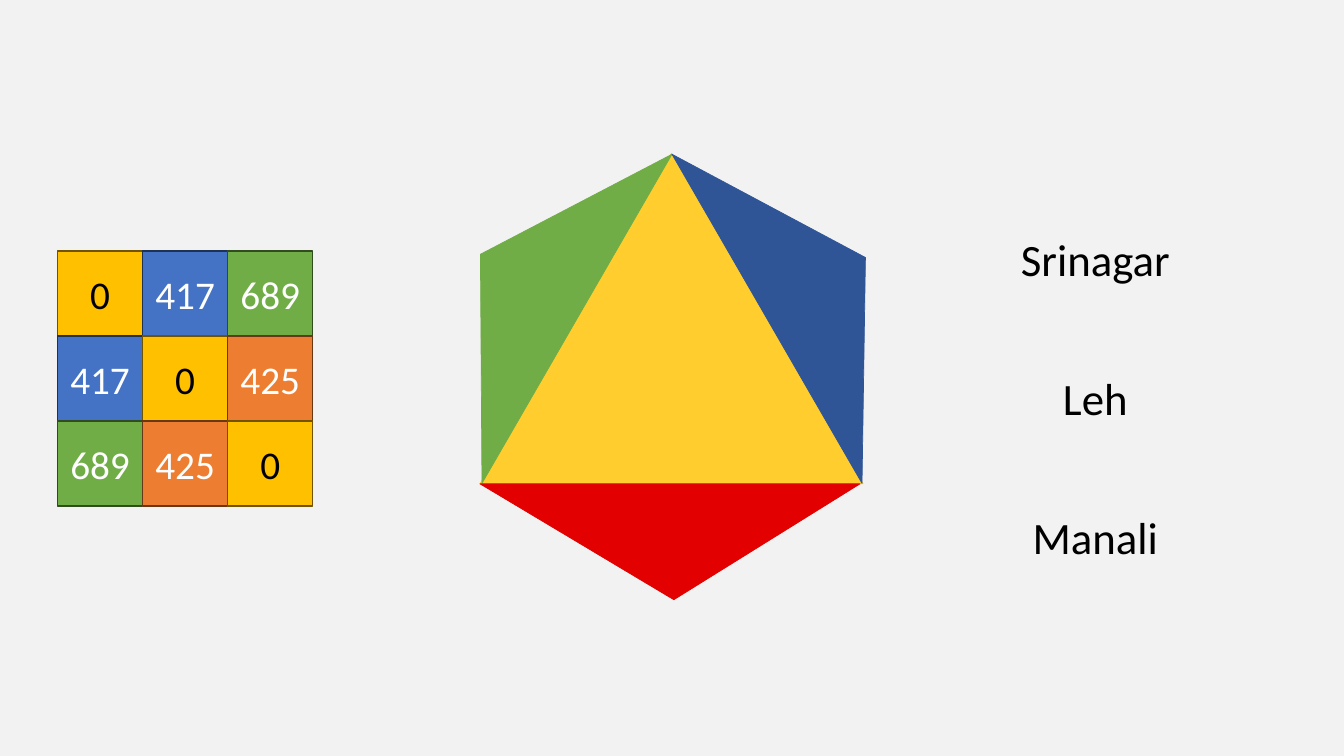
from dataclasses import dataclass

from pptx import Presentation
from pptx.dml.color import RGBColor
from pptx.enum.shapes import MSO_SHAPE
from pptx.enum.text import MSO_ANCHOR, MSO_AUTO_SIZE, PP_ALIGN
from pptx.shapes.autoshape import Shape
from pptx.shapes.shapetree import GroupShapes
from pptx.text.text import TextFrame
from pptx.util import Inches, Pt

TRI, RECT = MSO_SHAPE.ISOSCELES_TRIANGLE, MSO_SHAPE.RECTANGLE
MIDDLE, TOP = MSO_ANCHOR.MIDDLE, MSO_ANCHOR.TOP
CENTER, GROW = PP_ALIGN.CENTER, MSO_AUTO_SIZE.SHAPE_TO_FIT_TEXT
WIDE, HIGH = Inches(13.33), Inches(7.5)


@dataclass
class Face:
    """A triangle of the hexagon, placed in percent of the slide."""
    left: float
    top: float
    width: float
    height: float
    fill: str
    turn: float = 0
    peak: float = 0.5


@dataclass
class Tint:
    """The colours of one distance."""
    fill: str
    line: str
    text: str = "FFFFFF"


@dataclass
class City:
    """A city name and the width of its label in percent."""
    name: str
    width: float


FACES = [
    Face(35.71, 20.27, 28.51, 43.73, "FFCD2D"),
    Face(25.06, 30.67, 28.28, 15.33, "70AD47", 300, 0.52),
    Face(35.71, 64, 28.28, 15.33, "E20000", 180, 0.49),
    Face(46.66, 30.67, 28.28, 15.33, "2F5597", 60, 0.49),
]
ROADS = [[0, 417, 689], [417, 0, 425], [689, 425, 0]]
TINTS = {
    0: Tint("FFC000", "705400", "000000"),
    417: Tint("4472C4", "1E3256"),
    425: Tint("ED7D31", "683715"),
    689: Tint("70AD47", "314C1F"),
}
CITIES = [City("Srinagar", 12.75), City("Leh", 6.38), City("Manali", 10.95)]
GRID_X, GRID_Y, CELL_W, CELL_H = 4.28, 33.2, 6.33, 11.25
NAME_X, NAME_Y, NAME_H, STEP = 81.5, 30, 8.53, 18.4


def color(code: str) -> RGBColor:
    """Turn a hex string into a colour."""
    return RGBColor.from_string(code)


def place(left: float, top: float, width: float, height: float) -> tuple[int, ...]:
    """Turn percent of the slide into lengths."""
    return (int(WIDE * left / 100), int(HIGH * top / 100),
            int(WIDE * width / 100), int(HIGH * height / 100))


def write(frame: TextFrame, text: str, *, size: float, tone: str = "000000",
          anchor: MSO_ANCHOR = TOP, wrap: bool = True) -> None:
    """Write one centred line of text."""
    frame.word_wrap = wrap
    frame.vertical_anchor = anchor
    para = frame.paragraphs[0]
    para.alignment = CENTER
    run = para.add_run()
    run.text = text
    run.font.name = "Calibri"
    run.font.size = Pt(size)
    run.font.color.rgb = color(tone)


def draw(group: GroupShapes, kind: MSO_SHAPE, box: tuple[int, ...],
         fill: str, line: str, weight: float) -> Shape:
    """Add a filled and outlined shape."""
    shape = group.add_shape(kind, *box)
    shape.shadow.inherit = False
    shape.fill.solid()
    shape.fill.fore_color.rgb = color(fill)
    shape.line.color.rgb = color(line)
    shape.line.width = Pt(weight)
    return shape


def add_face(group: GroupShapes, face: Face) -> None:
    """Draw one triangle of the hexagon."""
    box = place(face.left, face.top, face.width, face.height)
    shape = draw(group, TRI, box, face.fill, face.fill, 0.5)
    shape.adjustments[0] = face.peak
    shape.rotation = face.turn


def add_cell(group: GroupShapes, row: int, col: int, road: int) -> None:
    """Draw one square of the distance grid."""
    tint = TINTS[road]
    box = place(GRID_X + col * CELL_W, GRID_Y + row * CELL_H, CELL_W, CELL_H)
    shape = draw(group, RECT, box, tint.fill, tint.line, 1)
    write(shape.text_frame, str(road), size=28, tone=tint.text, anchor=MIDDLE)


def main() -> None:
    """Build and save the slide."""
    deck = Presentation()
    deck.slide_width, deck.slide_height = WIDE, HIGH
    slide = deck.slides.add_slide(deck.slide_layouts[6])
    slide.background.fill.solid()
    slide.background.fill.fore_color.rgb = color("F2F2F2")

    gem = slide.shapes.add_group_shape().shapes
    for face in FACES:
        add_face(gem, face)

    grid = slide.shapes.add_group_shape().shapes
    for row, roads in enumerate(ROADS):
        for col, road in enumerate(roads):
            add_cell(grid, row, col, road)

    for row, city in enumerate(CITIES):
        left = NAME_X - city.width / 2
        box = place(left, NAME_Y + row * STEP, city.width, NAME_H)
        frame = slide.shapes.add_textbox(*box).text_frame
        write(frame, city.name, size=32, wrap=False)
        frame.auto_size = GROW

    deck.save("out.pptx")


if __name__ == "__main__":
    main()
